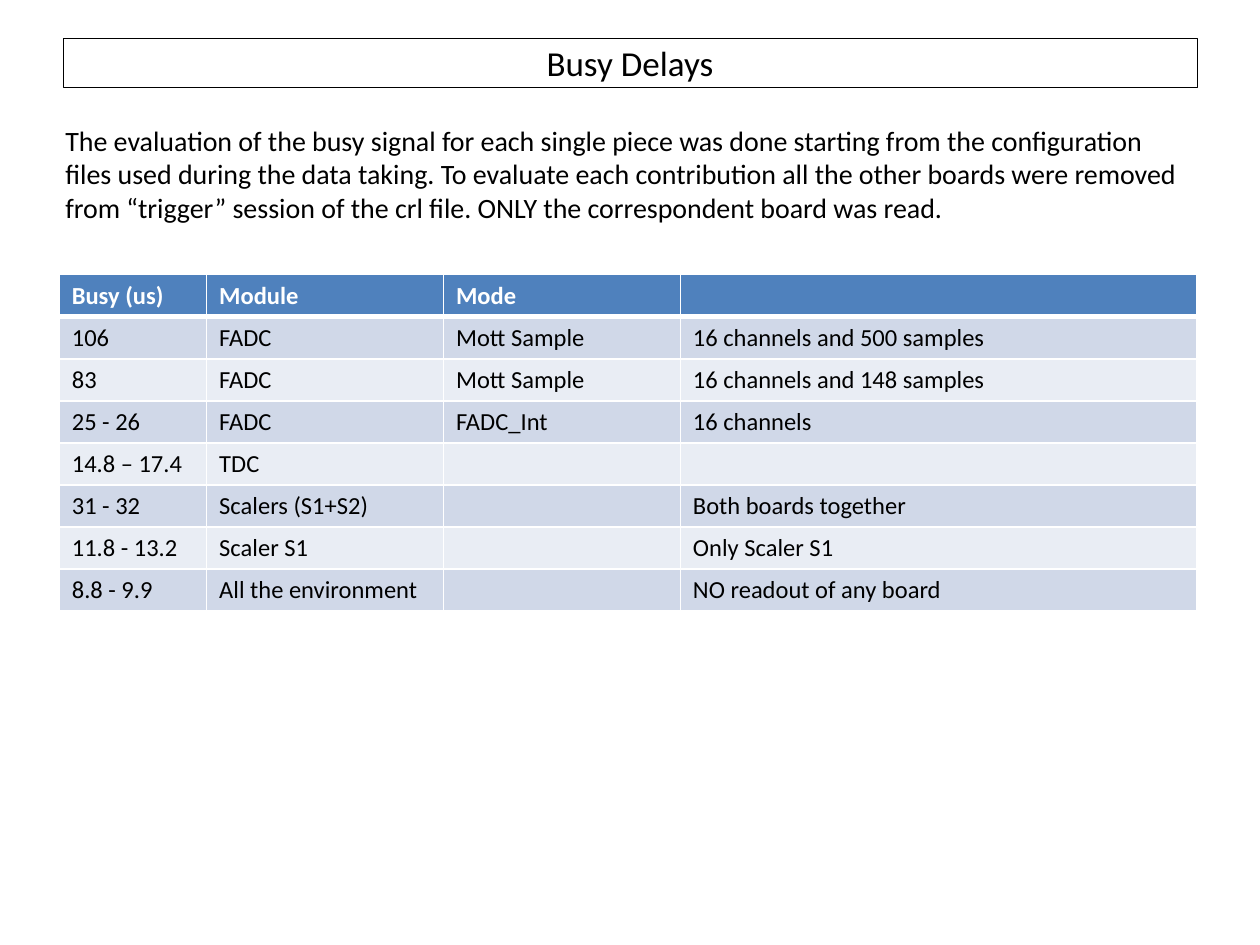
from lxml import etree
from pptx import Presentation
from pptx.dml.color import RGBColor
from pptx.enum import text as t
from pptx.oxml import ns
from pptx.util import Inches, Pt

HUES = {"ink": "000000", "paper": "FFFFFF", "head": "4F81BD",
        "odd": "D0D8E8", "even": "E9EDF4"}
INTRO = ("The evaluation of the busy signal for each single piece was done "
         "starting from the configuration files used during the data taking. "
         "To evaluate each contribution all the other boards were removed from "
         "“trigger” session of the crl file. ONLY the correspondent board was read.")
WIDTHS = [1.17, 1.88, 1.88, 4.1]
ROWS = [
    ["Busy (us)", "Module", "Mode", ""],
    ["106", "FADC", "Mott Sample", "16 channels and 500 samples"],
    ["83", "FADC", "Mott Sample", "16 channels and 148 samples"],
    ["25 - 26", "FADC", "FADC_Int", "16 channels"],
    ["14.8 – 17.4", "TDC", "", ""],
    ["31 - 32", "Scalers (S1+S2)", "", "Both boards together"],
    ["11.8 - 13.2", "Scaler S1", "", "Only Scaler S1"],
    ["8.8 - 9.9", "All the environment", "", "NO readout of any board"],
]


def hue(name):
    return RGBColor.from_string(HUES[name])


def sub(node, tag, **attrs):
    return etree.SubElement(node, ns.qn(tag), **attrs)


def write(frame, words, size=14, ink="ink", bold=False, align=t.PP_ALIGN.LEFT):
    para = frame.paragraphs[0]
    para.alignment = align
    if not words:
        sub(para._p, "a:endParaRPr", sz=str(size * 100))
        return
    run = para.add_run()
    run.text = words
    font = run.font
    font.name, font.size, font.bold = "Calibri", Pt(size), bold
    font.color.rgb = hue(ink)


class Deck:
    """Holds the style and the current slide."""

    def __init__(self):
        self.file = Presentation()
        self.file.slide_width = Inches(10)
        self.file.slide_height = Inches(7.5)
        self.slide = self.file.slides.add_slide(self.file.slide_layouts[5])

    def title(self, words, x, y, w, h):
        box = self.slide.shapes.title
        box.left, box.top, box.width, box.height = map(Inches, (x, y, w, h))
        box.line.color.rgb = hue("ink")
        box.line.width = Pt(0.25)
        frame = box.text_frame
        frame.auto_size = t.MSO_AUTO_SIZE.NONE
        frame.vertical_anchor = t.MSO_ANCHOR.MIDDLE
        write(frame, words, size=20, align=t.PP_ALIGN.CENTER)

    def text(self, words, x, y, w, h):
        box = self.slide.shapes.add_textbox(*map(Inches, (x, y, w, h)))
        frame = box.text_frame
        frame.word_wrap = True
        frame.auto_size = t.MSO_AUTO_SIZE.SHAPE_TO_FIT_TEXT
        write(frame, words, size=16)

    def edge(self, cell, side, width):
        line = sub(cell._tc.get_or_add_tcPr(), f"a:ln{side}", w=str(Pt(width)))
        sub(sub(line, "a:solidFill"), "a:srgbClr", val=HUES["paper"])

    def table(self, rows, widths, x, y, h):
        place = map(Inches, (x, y, sum(widths), h))
        grid = self.slide.shapes.add_table(len(rows), len(widths), *place).table
        for col, width in zip(grid.columns, widths):
            col.width = Inches(width)
        for i, row in enumerate(rows):
            head = i == 0
            shade = "head" if head else "odd" if i % 2 else "even"
            for j, words in enumerate(row):
                cell = grid.cell(i, j)
                thick = {"T": 3 if i == 1 else 1, "B": 3 if head else 1}
                for side in "LRTB":
                    self.edge(cell, side, thick.get(side, 1))
                cell.fill.solid()
                cell.fill.fore_color.rgb = hue(shade)
                write(cell.text_frame, words, bold=head,
                      ink="paper" if head else "ink")


def main():
    deck = Deck()
    deck.title("Busy Delays", 0.5, 0.3, 9, 0.39)
    deck.text(INTRO, 0.42, 0.93, 9.12, 0.91)
    deck.table(ROWS, WIDTHS, 0.47, 2.18, 2.67)
    deck.file.save("out.pptx")


if __name__ == "__main__":
    main()
